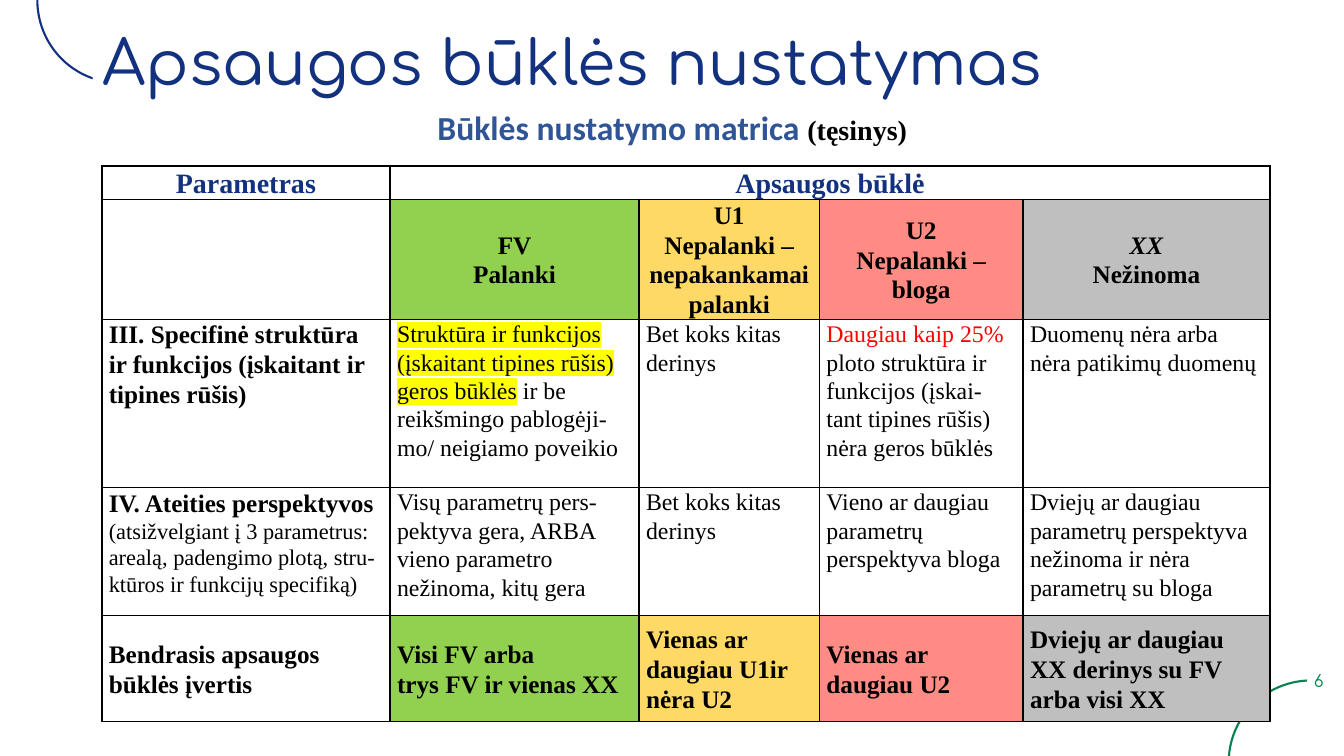
from pptx import Presentation
from pptx.dml.color import RGBColor
from pptx.enum.shapes import MSO_SHAPE as Shape
from pptx.enum.text import MSO_ANCHOR as Anchor, PP_ALIGN as Align
from pptx.oxml.ns import qn
from pptx.util import Pt
from lxml.etree import SubElement as Sub

PX = 9144
NAVY = RGBColor(0x12, 0x31, 0x7F)
BLUE = RGBColor(0x2F, 0x55, 0x97)
TEAL = RGBColor(0x05, 0x82, 0x4E)
BLACK = RGBColor(0, 0, 0)
WHITE = RGBColor(255, 255, 255)
RED = RGBColor(255, 0, 0)
YELLOW = RGBColor(255, 255, 0)
GREEN = RGBColor(0x92, 0xD0, 0x50)
GOLD = RGBColor(0xFF, 0xD9, 0x66)
PINK = RGBColor(0xFF, 0x8B, 0x85)
GREY = RGBColor(0xBF, 0xBF, 0xBF)
TINTS = [None, GREEN, GOLD, PINK, GREY]
TIMES = "Times New Roman"
COLS = [286, 247, 179, 202, 245]
ROWS = [33, 119, 167, 127, 105]
LEADS = [Pt(23.5), Pt(21.3), 1.07, 1.07, 1.07]

HEADS = ["Parametras", "Apsaugos būklė"]
STATES = ["", "FV\nPalanki", "U1\nNepalanki – nepakankamai palanki",
          "U2\nNepalanki – bloga", "XX\nNežinoma"]
FORMS = [
    "III. Specifinė struktūra ir funkcijos (įskaitant ir tipines rūšis)",
    [("Struktūra ir funkcijos (įskaitant tipines rūšis) geros būklės",
      {"mark": YELLOW}),
     (" ir be reikšmingo pablogėji-mo/ neigiamo poveikio", {})],
    "Bet koks kitas derinys",
    [("Daugiau kaip 25% ", {"color": RED}),
     ("ploto struktūra ir funkcijos (įskai-tant tipines rūšis) "
      "nėra geros būklės", {})],
    "Duomenų nėra arba nėra patikimų duomenų",
]
HOPES = [
    [("IV. Ateities perspektyvos ", {"size": 18, "bold": True}),
     ("(atsižvelgiant į 3 parametrus: arealą, padengimo plotą, "
      "stru-ktūros ir funkcijų specifiką)", {"size": 16})],
    "Visų parametrų pers-pektyva gera, ARBA vieno parametro "
    "nežinoma, kitų gera",
    "Bet koks kitas derinys",
    "Vieno ar daugiau parametrų perspektyva bloga",
    "Dviejų ar daugiau parametrų perspektyva nežinoma ir nėra "
    "parametrų su bloga",
]
TOTALS = [
    "Bendrasis apsaugos būklės įvertis",
    "Visi FV arba\ntrys FV ir vienas XX",
    "Vienas ar daugiau U1ir nėra U2",
    "Vienas ar daugiau U2",
    "Dviejų ar daugiau XX derinys su FV arba visi XX",
]


def style(run, size, color=BLACK, bold=False, name=TIMES, mark=None):
    font = run.font
    font.size, font.bold = Pt(size), bold
    font.color.rgb = color
    if mark is not None:
        light = Sub(run._r.get_or_add_rPr(), qn("a:highlight"))
        Sub(light, qn("a:srgbClr"), val=str(mark))
    font.name = name


def fill_text(frame, text, base, align=Align.LEFT, space=1.0, after=0):
    if isinstance(text, str):
        frame.text = text
        for para in frame.paragraphs:
            for run in para.runs:
                style(run, **base)
    else:
        for words, extra in text:
            run = frame.paragraphs[0].add_run()
            run.text = words
            style(run, **{**base, **extra})
    for para in frame.paragraphs:
        para.alignment = align
        para.line_spacing = space
        para.space_after = Pt(after)


def add_text(slide, box, text, base, anchor=Anchor.TOP, **layout):
    shape = slide.shapes.add_textbox(*[n * PX for n in box])
    frame = shape.text_frame
    frame.word_wrap = True
    frame.vertical_anchor = anchor
    fill_text(frame, text, base, **layout)
    return shape


def add_arc(slide, box, color, turn, start, end):
    arc = slide.shapes.add_shape(Shape.ARC, *[n * PX for n in box])
    arc.shadow.inherit = False
    arc.fill.background()
    arc.line.color.rgb = color
    arc.line.width = Pt(1.5)
    arc.rotation = turn
    arc.adjustments[0] = start * 0.6
    arc.adjustments[1] = end * 0.6


def add_head(slide, box):
    x, y, w, h = box
    title = add_text(slide, (x, y, w, 89), "Apsaugos būklės nustatymas",
                     {"size": 44, "color": NAVY, "name": "Comfortaa"},
                     Anchor.MIDDLE, space=0.9)
    title.fill.solid()
    title.fill.fore_color.rgb = WHITE
    sub = add_text(slide, (x, y + 89, w, h - 89),
                   [("Būklės nustatymo matrica ",
                     {"size": 24, "color": BLUE, "name": "Calibri"}),
                    ("(tęsinys)", {})],
                   {"size": 20, "bold": True}, align=Align.CENTER, space=0.8)
    sub.text_frame.paragraphs[0].space_before = Pt(10)


def add_edges(cell, row, col):
    last = col == len(COLS) - 1 or cell.is_merge_origin
    thick = {"L": col == 0, "R": last, "T": row in (0, 2), "B": row == 1}
    props = cell._tc.get_or_add_tcPr()
    for side, wide in thick.items():
        line = Sub(props, qn("a:ln" + side), w=str(Pt(1.5 if wide else 1)))
        solid = Sub(line, qn("a:solidFill"))
        Sub(solid, qn("a:srgbClr"), val=str(BLACK))


def add_matrix(slide, box):
    frame = slide.shapes.add_table(len(ROWS), len(COLS),
                                   *[n * PX for n in box])
    table = frame.table
    table.first_row = table.horz_banding = False
    for part, width in zip(table.columns, COLS):
        part.width = width * PX
    for part, height in zip(table.rows, ROWS):
        part.height = height * PX
    table.cell(0, 1).merge(table.cell(0, 4))
    for row, texts in enumerate([HEADS, STATES, FORMS, HOPES, TOTALS]):
        head, body = row < 2, row in (2, 3)
        for col in range(len(COLS)):
            cell = table.cell(row, col)
            cell.margin_left = (5 if head else 7) * PX
            cell.margin_right = (5 if head else 8) * PX
            cell.margin_top = cell.margin_bottom = 0
            cell.vertical_anchor = Anchor.TOP if body else Anchor.MIDDLE
            add_edges(cell, row, col)
            tint = TINTS[col] if row in (1, 4) else None
            if tint is None:
                cell.fill.background()
            else:
                cell.fill.solid()
                cell.fill.fore_color.rgb = tint
            if col >= len(texts) or not texts[col]:
                continue
            plain = body and (col > 0 or row == 3)
            base = {"size": 20 if row == 0 else 17 if plain else 18,
                    "color": NAVY if row == 0 else BLACK,
                    "bold": not plain}
            after = 8 if row == 0 or (col == 0 and row != 3) else 0
            fill_text(cell.text_frame, texts[col], base,
                      Align.CENTER if head else Align.LEFT,
                      LEADS[row], after)
    mark = table.cell(1, 4).text_frame.paragraphs[0].runs[0]
    mark.font.italic = True


def main():
    deck = Presentation()
    deck.slide_width, deck.slide_height = 4000 * PX // 3, 750 * PX
    slide = deck.slides.add_slide(deck.slide_layouts[6])
    add_arc(slide, (37, -82, 162, 164), NAVY, 180, 280, 0)
    add_arc(slide, (1220, 674, 162, 164), TEAL, 270, 270, 357)
    add_head(slide, (92, 20, 1150, 132))
    add_text(slide, (1023, 655, 300, 40), "6",
             {"size": 12, "color": TEAL, "name": "Comfortaa"},
             Anchor.MIDDLE, align=Align.RIGHT)
    add_matrix(slide, (101, 165, sum(COLS), sum(ROWS)))
    deck.save("out.pptx")


if __name__ == "__main__":
    main()
